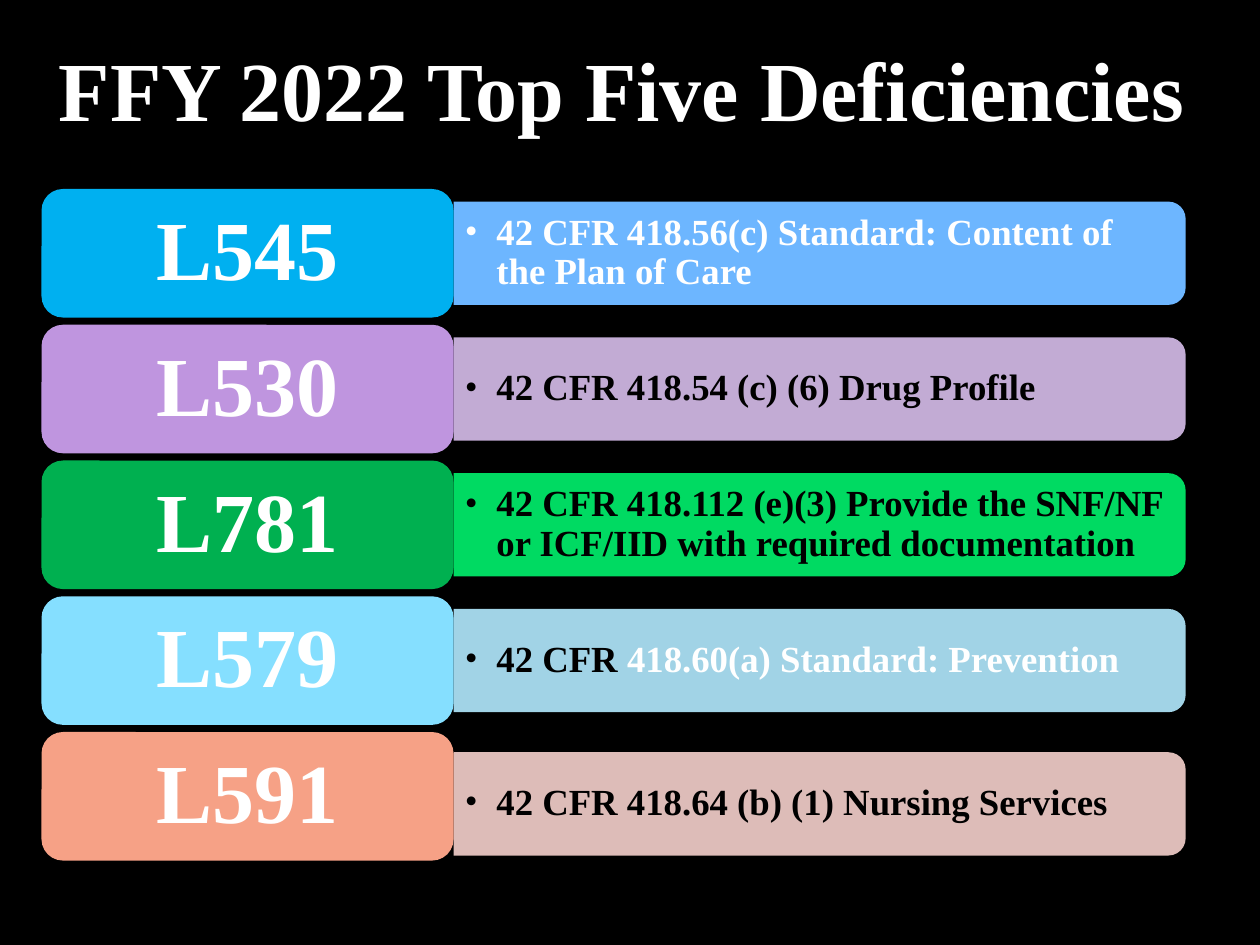
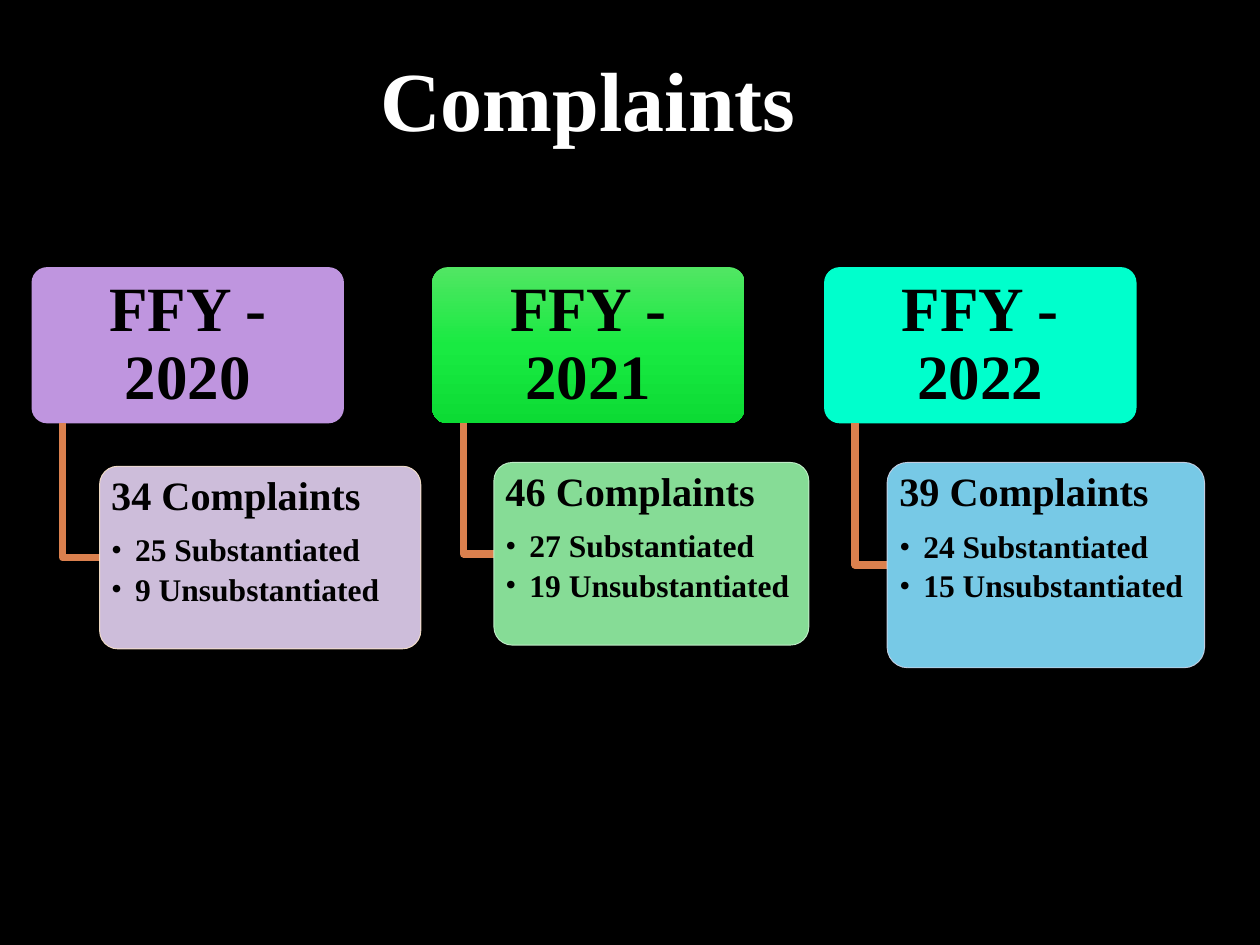
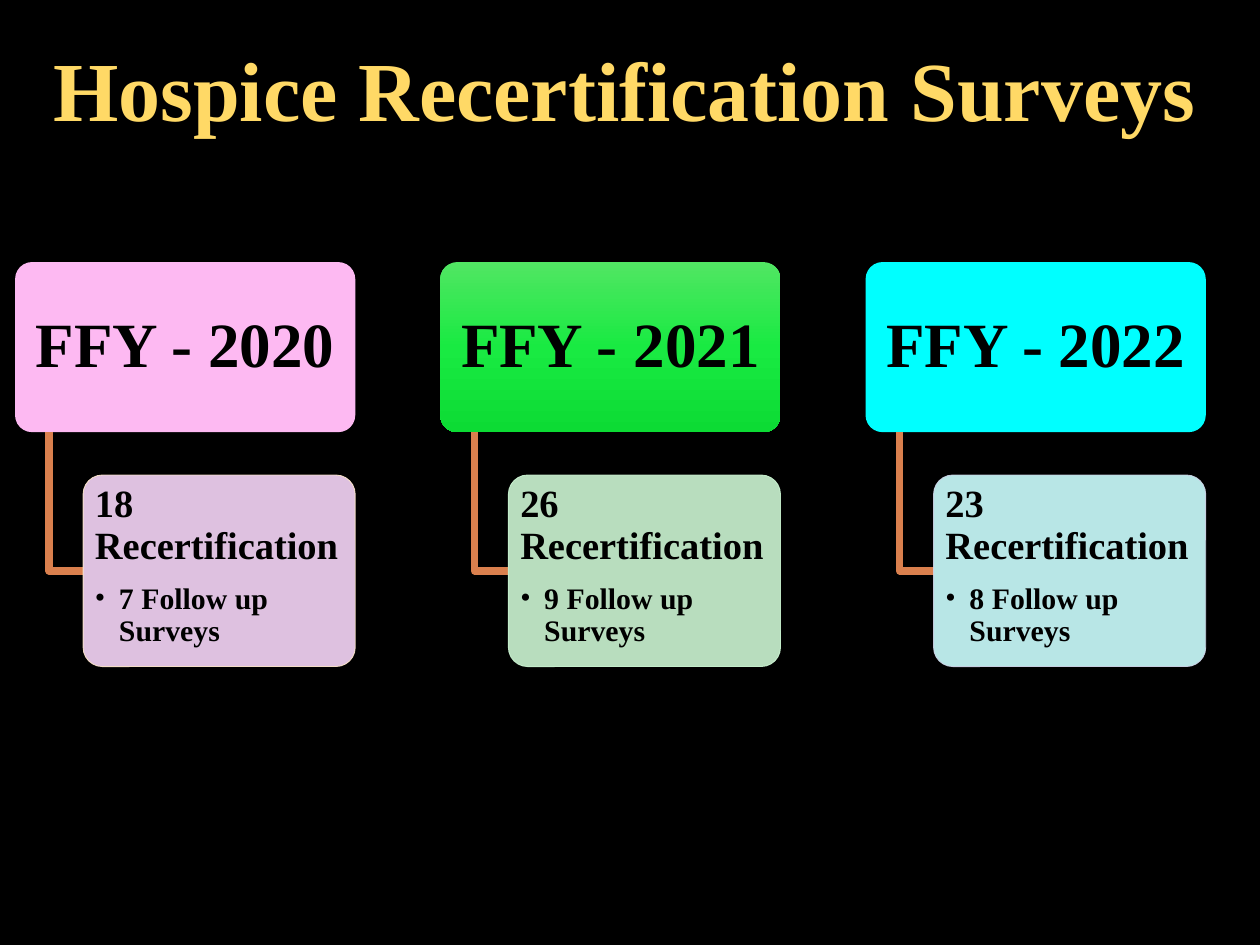
from copy import deepcopy

from lxml.etree import SubElement
from pptx import Presentation
from pptx.dml.color import RGBColor
from pptx.enum.shapes import MSO_SHAPE
from pptx.enum.text import MSO_ANCHOR, MSO_AUTO_SIZE, PP_ALIGN
from pptx.oxml.ns import qn
from pptx.util import Inches, Pt

FONT = "Times New Roman"
TITLE_ONLY = 5
COLORS = {
    "black": "000000", "white": "FFFFFF", "gold": "FFD966", "elbow": "DA804E",
    "sky": "00B0F0", "sky_bar": "6DB6FF",
    "violet": "BF95DF", "violet_bar": "D8BEEC", "violet_card": "E4D2F2",
    "green": "00B050", "green_bar": "00F26D", "green_card": "95F5A7",
    "ice": "85DFFF", "ice_bar": "B3EBFF",
    "salmon": "F6A186", "salmon_bar": "F6D1CD",
    "turquoise": "00FFCC", "cyan": "00FFFF", "cyan_card": "CCFFFF",
    "pink": "FDB9F2", "pink_card": "F7D7F9",
    "cream_edge": "FFE8CC", "mint": "CCF6D3", "blue_edge": "CFD6EA",
    "grass_light": "51E663", "grass": "19EA42", "grass_dark": "0CDB34",
}
GRASS_GRADIENT = ("grass_light", "grass", "grass_dark")


def rgb(name):
    return RGBColor.from_string(COLORS[name])


def set_alpha(color_parent, percent):
    for color in color_parent.iter(qn("a:srgbClr")):
        SubElement(color, qn("a:alpha")).set("val", str(percent * 1000))


class Deck:
    """Holds the presentation, its style and the slide being filled."""

    def __init__(self):
        self.prs = Presentation()
        self.prs.slide_width, self.prs.slide_height = Inches(10), Inches(7.5)
        background = self.prs.slide_master.background.fill
        background.solid()
        background.fore_color.rgb = rgb("black")
        self.slide = None

    def new_slide(self, title, left, top, width=10, color="white"):
        self.slide = self.prs.slides.add_slide(self.prs.slide_layouts[TITLE_ONLY])
        heading = self.slide.shapes.title
        heading.left, heading.top = Inches(left), Inches(top)
        heading.width, heading.height = Inches(width), Inches(0.91)
        frame = heading.text_frame
        frame.auto_size = MSO_AUTO_SIZE.NONE
        frame.vertical_anchor = MSO_ANCHOR.TOP
        frame.paragraphs[0].alignment = PP_ALIGN.CENTER
        self.run(frame.paragraphs[0], title, 48, color)

    def run(self, paragraph, text, size, color="black"):
        run = paragraph.add_run()
        run.text = text
        run.font.name, run.font.size, run.font.bold = FONT, Pt(size), True
        run.font.color.rgb = rgb(color)

    def paragraph(self, frame, runs, size, align=PP_ALIGN.LEFT, hang=0):
        """Add (text, color) runs; a hanging indent makes a bullet."""
        first = frame.paragraphs[0]
        paragraph = frame.add_paragraph() if first.runs else first
        paragraph.alignment = align
        paragraph.line_spacing = 0.9
        paragraph.space_after = Pt(round(size * (0.17 if hang else 0.4)))
        if hang:
            props = paragraph._p.get_or_add_pPr()
            props.set("marL", str(Inches(hang)))
            props.set("indent", str(Inches(-hang)))
            SubElement(props, qn("a:buFont")).set("typeface", FONT)
            SubElement(props, qn("a:buChar")).set("char", "•")
        for text, color in runs:
            self.run(paragraph, text, size, color)

    def frame(self, shape, side, edge, anchor=MSO_ANCHOR.MIDDLE):
        frame = shape.text_frame
        frame.word_wrap = True
        frame.vertical_anchor = anchor
        frame.margin_left = frame.margin_right = Inches(side)
        frame.margin_top = frame.margin_bottom = Inches(edge)
        return frame

    def panel(self, kind, left, top, width, height, fill, alpha=100, edge=None, corner=None):
        """Draw a filled shape; a tuple of fill names gives a vertical gradient."""
        shape = self.slide.shapes.add_shape(
            kind, Inches(left), Inches(top), Inches(width), Inches(height))
        shape.shadow.inherit = False
        if corner:
            shape.adjustments[0] = corner
        if isinstance(fill, tuple):
            self.gradient(shape, fill)
        else:
            shape.fill.solid()
            shape.fill.fore_color.rgb = rgb(fill)
        if edge:
            shape.line.color.rgb = rgb(edge)
            shape.line.width = Pt(0.5)
        else:
            shape.line.fill.background()
        if alpha < 100:
            set_alpha(shape._element.spPr, alpha)
        return shape

    def gradient(self, shape, names):
        shape.fill.gradient()
        shape.fill.gradient_angle = 270
        stop_list = next(shape._element.spPr.iter(qn("a:gsLst")))
        while len(stop_list) < len(names):
            stop_list.append(deepcopy(stop_list[0]))
        for i, (stop, name) in enumerate(zip(shape.fill.gradient_stops, names)):
            stop.position = i / (len(names) - 1)
            stop.color.rgb = rgb(name)

    def elbow(self, left, top, right, bottom):
        x, y = Inches(left), Inches(top)
        builder = self.slide.shapes.build_freeform(x, y)
        builder.add_line_segments(
            [(x, Inches(bottom)), (Inches(right), Inches(bottom))], close=False)
        line = builder.convert_to_shape()
        line.shadow.inherit = False
        line.fill.background()
        line.line.color.rgb = rgb("elbow")
        line.line.width = Pt(4.33)

    def deficiency(self, top, bar_offset, tag, tag_fill, bar_fill, alpha, runs):
        left, width, height = 3.6, 5.81, 0.82
        bar_top = top + bar_offset
        # The bar stands upright, then turns so its rounded end faces right.
        bar = self.panel(
            MSO_SHAPE.ROUND_2_SAME_RECTANGLE, left + (width - height) / 2,
            bar_top - (width - height) / 2, height, width, bar_fill, alpha)
        bar.rotation = 90
        standard = self.slide.shapes.add_textbox(
            Inches(left), Inches(bar_top + 0.04), Inches(5.77), Inches(0.74))
        self.paragraph(self.frame(standard, 0.09, 0.04), runs, 21, hang=0.25)
        label = self.panel(MSO_SHAPE.ROUNDED_RECTANGLE, 0.33, top, 3.27, 1.02, tag_fill)
        self.paragraph(self.frame(label, 0.2, 0.1), [(tag, "white")], 48, PP_ALIGN.CENTER)

    def year_branch(self, year, year_box, year_fill, card_box, card_fill, card_edge,
                    total, details, sizes):
        """Draw a year box with a detail card hanging from it; boxes are left, top, width, height."""
        left, top, width, height = year_box
        card_left, card_top, _, card_height = card_box
        rounded = MSO_SHAPE.ROUNDED_RECTANGLE
        header = self.panel(rounded, *year_box, year_fill, corner=0.1)
        self.paragraph(self.frame(header, 0.07, 0.05), [(f"FFY - {year}", "black")],
                       36, PP_ALIGN.CENTER)
        self.elbow(left + width / 10, top + height, card_left, card_top + card_height / 2)
        card = self.panel(rounded, *card_box, card_fill, 90, card_edge, corner=0.1)
        frame = self.frame(card, 0.05, 0.03, MSO_ANCHOR.TOP)
        total_size, detail_size = sizes
        self.paragraph(frame, [(total, "black")], total_size)
        for detail in details:
            self.paragraph(frame, [(detail, "black")], detail_size, hang=0.19)


def deficiencies_slide(deck):
    deck.new_slide("FFY 2022 Top Five Deficiencies ", 0.04, 0.25, 9.96)
    deficiencies = [
        ("L545", "sky", "sky_bar", 100,
         [("42 CFR 418.56(c) Standard: Content of the Plan of Care", "white")]),
        ("L530", "violet", "violet_bar", 90, [("42 CFR 418.54 (c) (6) Drug Profile", "black")]),
        ("L781", "green", "green_bar", 90,
         [("42 CFR 418.112 (e)(3) Provide the SNF/NF or ICF/IID with required documentation",
           "black")]),
        ("L579", "ice", "ice_bar", 90,
         [("42 CFR ", "black"), ("418.60(a) Standard: Prevention", "white")]),
        ("L591", "salmon", "salmon_bar", 90,
         [("42 CFR 418.64 (b) (1) Nursing Services", "black")]),
    ]
    first_top, last_top = 1.5, 5.81
    last = len(deficiencies) - 1
    for i, deficiency in enumerate(deficiencies):
        top = first_top + i * (last_top - first_top) / last
        deck.deficiency(top, 0.16 if i == last else 0.1, *deficiency)


def complaints_slide(deck):
    deck.new_slide("Complaints ", -0.25, 0.33)
    years = [
        (2020, 0.25, "violet", (0.79, 3.7, 2.55, 1.45), "violet_card", "cream_edge", 34, 25, 9),
        (2021, 3.43, GRASS_GRADIENT, (3.92, 3.67, 2.5, 1.45), "green_card", "mint", 46, 27, 19),
        (2022, 6.54, "turquoise", (7.04, 3.67, 2.52, 1.63), "ice", "blue_edge", 39, 24, 15),
    ]
    for year, left, fill, card_box, card_fill, edge, total, proven, unproven in years:
        deck.year_branch(
            year, (left, 2.12, 2.48, 1.24), fill, card_box, card_fill, edge,
            f"{total} Complaints",
            [f"{proven} Substantiated", f"{unproven} Unsubstantiated"], (23, 18))


def recertification_slide(deck):
    deck.new_slide("Hospice Recertification Surveys", -0.04, 0.25, color="gold")
    years = [
        (2020, "pink", "pink_card", "cream_edge", 18, 7),
        (2021, GRASS_GRADIENT, "mint", "mint", 26, 9),
        (2022, "cyan", "cyan_card", "blue_edge", 23, 8),
    ]
    for i, (year, fill, card_fill, edge, total, follow_ups) in enumerate(years):
        left = 0.12 + i * 6.75 / 2
        deck.year_branch(
            year, (left, 2.08, 2.7, 1.35), fill, (left + 0.54, 3.77, 2.16, 1.52),
            card_fill, edge, f"{total} Recertification",
            [f"{follow_ups} Follow up Surveys"], (22, 17))


def main():
    deck = Deck()
    deficiencies_slide(deck)
    complaints_slide(deck)
    recertification_slide(deck)
    deck.prs.save("out.pptx")


if __name__ == "__main__":
    main()
